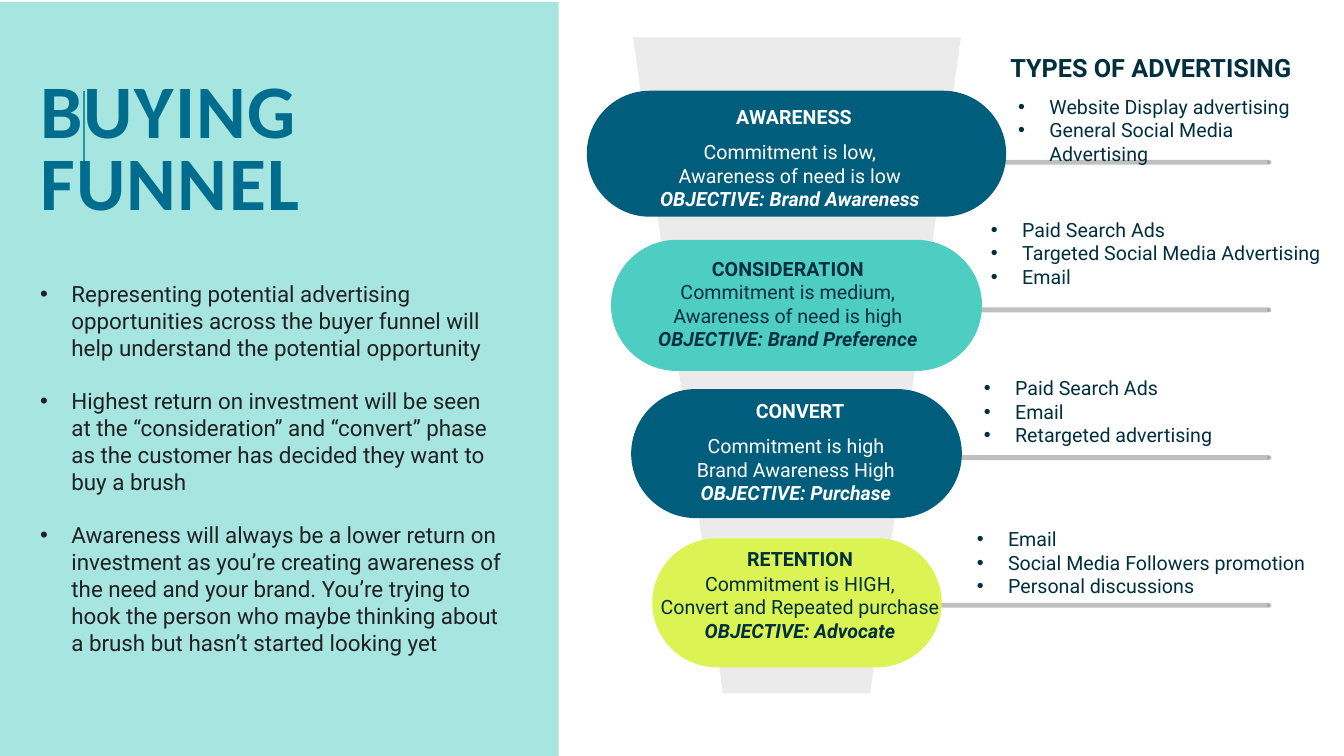
from dataclasses import dataclass

from pptx import Presentation
from pptx.dml.color import RGBColor
from pptx.enum.shapes import MSO_CONNECTOR, MSO_SHAPE
from pptx.enum.text import MSO_ANCHOR, PP_ALIGN
from pptx.oxml.ns import qn
from pptx.oxml.xmlchemy import OxmlElement
from pptx.util import Inches, Pt

STRAIGHT = MSO_CONNECTOR.STRAIGHT
RECTANGLE, PILL, OVAL = MSO_SHAPE.RECTANGLE, MSO_SHAPE.ROUNDED_RECTANGLE, MSO_SHAPE.OVAL
CENTER, LEFT = PP_ALIGN.CENTER, PP_ALIGN.LEFT
TOP, MIDDLE = MSO_ANCHOR.TOP, MSO_ANCHOR.MIDDLE


@dataclass(frozen=True)
class Theme:
    """Colours, fonts and type sizes of the slide."""
    navy: str = "005E7C"
    teal: str = "4ECDC3"
    lime: str = "DBF353"
    title: str = "006D8F"
    ink: str = "202124"
    dark: str = "002F3E"
    white: str = "FFFFFF"
    funnel: str = "EBEBEB"
    rule: str = "808080"
    title_font: str = "Calibri"
    body_font: str = "Roboto"
    title_size: int = 54
    heading_size: int = 18
    body_size: int = 16
    label_size: int = 14


class FunnelSlide:
    """Draws the elements of one slide in a shared theme."""

    def __init__(self, slide, theme):
        self.slide, self.theme = slide, theme

    def fade(self, shape):
        for color in shape.element.spPr.iter(qn("a:srgbClr")):
            alpha = OxmlElement("a:alpha")
            alpha.set("val", "50000")
            color.append(alpha)

    def paint(self, shape, color):
        shape.fill.solid()
        shape.fill.fore_color.rgb = RGBColor.from_string(color)
        shape.line.fill.background()
        shape.shadow.inherit = False

    def block(self, kind, box, color, faded=False):
        shape = self.slide.shapes.add_shape(kind, *map(Inches, box))
        if kind == PILL:
            shape.adjustments[0] = 0.5
        self.paint(shape, color)
        if faded:
            self.fade(shape)

    def outline(self, points, color):
        start, *others = [(Inches(x), Inches(y)) for x, y in points]
        builder = self.slide.shapes.build_freeform(*start)
        builder.add_line_segments(others, close=True)
        self.paint(builder.convert_to_shape(), color)

    def line(self, ends, color, width, faded=False):
        connector = self.slide.shapes.add_connector(STRAIGHT, *map(Inches, ends))
        connector.line.color.rgb = RGBColor.from_string(color)
        connector.line.width = Pt(width)
        connector.element.spPr.append(OxmlElement("a:effectLst"))
        if faded:
            self.fade(connector)

    def bullet(self, paragraph):
        properties = paragraph._p.get_or_add_pPr()
        properties.set("marL", str(Inches(0.31)))
        properties.set("indent", str(-Inches(0.31)))
        for tag, name, value in (("a:buFont", "typeface", "Arial"), ("a:buChar", "char", "•")):
            mark = OxmlElement(tag)
            mark.set(name, value)
            properties.append(mark)

    def text(self, box, lines, color, size, align=LEFT, anchor=TOP, bullets=False,
             gap=0, spacing=None, tracking=None, last=None, **font):
        frame = self.slide.shapes.add_textbox(*map(Inches, box)).text_frame
        frame.word_wrap = True
        frame.vertical_anchor = anchor
        for index, line in enumerate(lines):
            paragraph = frame.paragraphs[0] if index == 0 else frame.add_paragraph()
            if bullets:
                self.bullet(paragraph)
            paragraph.alignment = align
            if index and gap:
                paragraph.space_before = Pt(gap)
            if spacing:
                paragraph.line_spacing = spacing
            run = paragraph.add_run()
            run.text = line
            formats = {"name": self.theme.body_font, "size": Pt(size), **font}
            if last and index == len(lines) - 1:
                formats.update(last)
            for attribute, value in formats.items():
                setattr(run.font, attribute, value)
            run.font.color.rgb = RGBColor.from_string(color)
            if tracking:
                run._r.get_or_add_rPr().set("spc", str(tracking))


THEME = Theme()
STAGES = [
    ("AWARENESS", (6.89, 0.99), (5.92, 1.34), (5.82, 0.9, 4.16, 1.25), THEME.navy, THEME.white,
     ["Commitment is low,", "Awareness of need is low", "OBJECTIVE: Brand Awareness"]),
    ("CONSIDERATION", (6.83, 2.5), (5.9, 2.73), (6.06, 2.38, 3.68, 1.3), THEME.teal, THEME.dark,
     ["Commitment is medium,", "Awareness of need is high", "OBJECTIVE: Brand Preference"]),
    ("CONVERT", (6.95, 3.91), (5.98, 4.26), (6.26, 3.86, 3.28, 1.28), THEME.navy, THEME.white,
     ["Commitment is high", "Brand Awareness High", "OBJECTIVE: Purchase"]),
    ("RETENTION", (6.95, 5.38), (6.02, 5.62), (6.47, 5.34, 2.87, 1.28), THEME.lime, THEME.dark,
     ["Commitment is HIGH,", "Convert and Repeated purchase", "OBJECTIVE: Advocate"]),
]
ADVERTISING = [
    ((10, 0.89, 3.34, 0.81), ["Website Display advertising", "General Social Media Advertising"]),
    ((9.73, 2.11, 3.52, 0.81),
     ["Paid Search Ads", "Targeted Social Media Advertising", "Email"]),
    ((9.66, 3.68, 3.52, 0.81), ["Paid Search Ads", "Email", "Retargeted advertising"]),
    ((9.59, 5.18, 3.52, 0.81),
     ["Email", "Social Media Followers promotion", "Personal discussions"]),
]
INSIGHTS = [
    "Representing potential advertising opportunities across the buyer funnel will help "
    "understand the potential opportunity",
    "Highest return on investment will be seen at the “consideration” and “convert” phase "
    "as the customer has decided they want to buy a brush",
    "Awareness will always be a lower return on investment as you’re creating awareness of "
    "the need and your brand. You’re trying to hook the person who maybe thinking about "
    "a brush but hasn’t started looking yet",
]
FUNNEL = [(6.28, 0.37), (7.17, 6.88), (8.63, 6.88), (9.53, 0.37)]
RULE_TOP, RULE_STEP, RULE_END, DOT = 1.61, 1.465, 12.59, 0.04


def main():
    deck = Presentation()
    deck.slide_width, deck.slide_height = Inches(13.33), Inches(7.5)
    page = FunnelSlide(deck.slides.add_slide(deck.slide_layouts[6]), THEME)

    page.line((0.83, 1.9, 0.83, 0.9), THEME.navy, 1.5)
    page.block(RECTANGLE, (0, 0.02, 5.54, 7.5), THEME.teal, faded=True)
    page.outline(FUNNEL, THEME.funnel)
    for row in range(len(STAGES)):
        y = RULE_TOP + row * RULE_STEP
        page.line((9, y, RULE_END, y), THEME.rule, 3.5, faded=True)
        page.block(OVAL, (RULE_END - DOT / 2, y - DOT / 2, DOT, DOT), THEME.rule, faded=True)

    for name, name_at, detail_at, pill, fill, ink, details in STAGES:
        page.block(PILL, pill, fill)
        page.text((*name_at, 1.97, 0.34), [name], ink, THEME.label_size, CENTER, bold=True)
        page.text((*detail_at, 3.83, 1.04), details, ink, THEME.label_size, CENTER,
                  last={"bold": True, "italic": True})

    page.text((0.3, 0.16, 3.96, 2.71), ["BUYING", "FUNNEL"], THEME.title, THEME.title_size,
              anchor=MIDDLE, spacing=0.8, tracking=100, name=THEME.title_font, bold=True)
    page.text((0.3, 2.73, 4.81, 4.14), INSIGHTS, THEME.ink, THEME.body_size,
              bullets=True, gap=19)
    page.text((9.73, 0.47, 3.37, 0.4), ["TYPES OF ADVERTISING"], THEME.dark,
              THEME.heading_size, CENTER, bold=True)
    for box, channels in ADVERTISING:
        page.text(box, channels, THEME.dark, THEME.label_size, bullets=True)

    deck.save("out.pptx")


if __name__ == "__main__":
    main()
